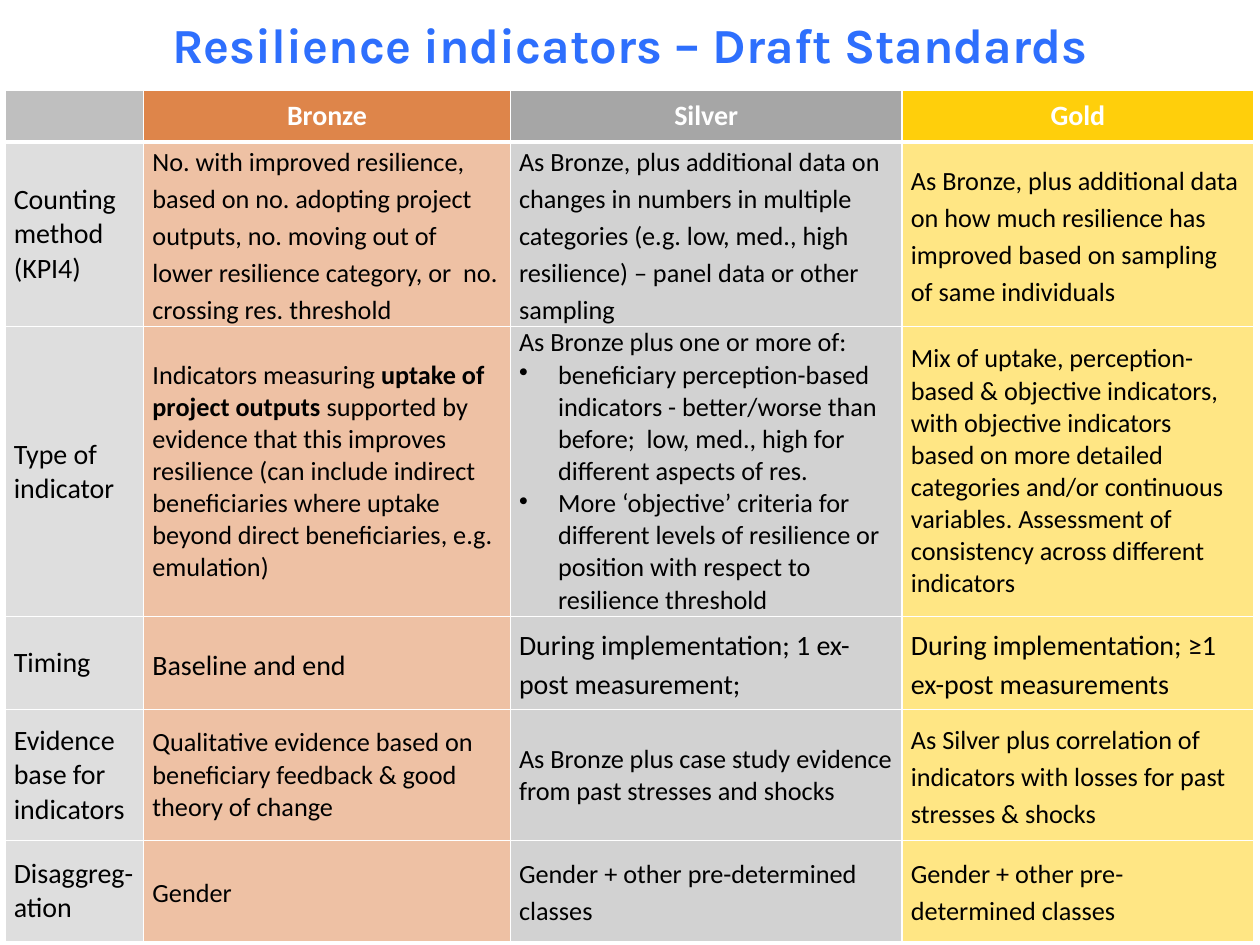
import pptx
import pptx.dml.color
import pptx.enum.text
import pptx.oxml
import pptx.oxml.ns
import pptx.util
from lxml import etree

Inches, Pt = pptx.util.Inches, pptx.util.Pt
RGBColor = pptx.dml.color.RGBColor
ALIGN = pptx.enum.text.PP_ALIGN
MIDDLE = pptx.enum.text.MSO_ANCHOR.MIDDLE

BLUE = RGBColor(0x2E, 0x6F, 0xFD)
WHITE = RGBColor(0xFF, 0xFF, 0xFF)
BLACK = RGBColor(0x00, 0x00, 0x00)
PALE_GREY = RGBColor(0xBF, 0xBF, 0xBF)
BRONZE = RGBColor(0xDE, 0x85, 0x4A)
SILVER = RGBColor(0xA6, 0xA6, 0xA6)
GOLD = RGBColor(0xFF, 0xCF, 0x0B)

# Table content: ** marks bold, a leading • marks a bullet
STANDARDS = ["", "Bronze", "Silver", "Gold"]
CRITERIA = [
    ["Counting method (KPI4)",
     "No. with improved resilience, based on no. adopting project outputs, no. moving out of "
     "lower resilience category, or  no. crossing res. threshold",
     "As Bronze, plus additional data on changes in numbers in multiple categories "
     "(e.g. low, med., high resilience) – panel data or other sampling",
     "As Bronze, plus additional data on how much resilience has improved based on sampling "
     "of same individuals"],
    ["Type of indicator",
     "Indicators measuring **uptake of project outputs **supported by evidence that this "
     "improves resilience (can include indirect beneficiaries where uptake beyond direct "
     "beneficiaries, e.g. emulation)",
     "As Bronze plus one or more of:\n"
     "•beneficiary perception-based indicators - better/worse than before;  low, med., high "
     "for different aspects of res.\n"
     "•More ‘objective’ criteria for different levels of resilience or position with respect "
     "to resilience threshold",
     "Mix of uptake, perception-based & objective indicators, with objective indicators  "
     "based on more detailed categories and/or continuous variables. Assessment of "
     "consistency across different indicators"],
    ["Timing",
     "Baseline and end",
     "During implementation; 1 ex-post measurement;",
     "During implementation; ≥1 ex-post measurements"],
    ["Evidence base for indicators",
     "Qualitative evidence based on beneficiary feedback & good theory of change",
     "As Bronze plus case study evidence from past stresses and shocks",
     "As Silver plus correlation of indicators with losses for past stresses & shocks"],
    ["Disaggreg-ation",
     "Gender",
     "Gender + other pre-determined classes",
     "Gender + other pre-determined classes"],
]
COLUMN_WIDTHS = [1.1, 2.91, 3.11, 2.79]
ROW_HEIGHTS = [0.37, 1.46, 2.3, 0.74, 1.04, 0.8]
COLUMN_COLOURS = [PALE_GREY, BRONZE, SILVER, GOLD]
TIMING_ROW = 3
SINGLE_SPACED = {(2, 1), (2, 2), (2, 3), (4, 1), (4, 2)}


def apply(target, formats):
    for name, value in formats.items():
        setattr(target, name, value)


class StandardsSlide:
    title_font = {"name": "Karla", "size": Pt(28), "bold": True}
    header_font = {"name": "Calibri", "size": Pt(16), "bold": True}
    body_insets = {"margin_left": Inches(0.07), "margin_right": Inches(0.07),
                   "margin_top": 0, "margin_bottom": 0}

    def __init__(self, deck):
        self.slide = deck.slides.add_slide(deck.slide_layouts[6])

    def add_runs(self, paragraph, text, font, colour):
        for index, part in enumerate(text.split("**")):
            if part:
                run = paragraph.add_run()
                run.text = part
                apply(run.font, font)
                run.font.color.rgb = colour
                if index % 2:
                    run.font.bold = True

    def title(self, text, left, top, width, height):
        box = self.slide.shapes.add_textbox(
            Inches(left), Inches(top), Inches(width), Inches(height))
        margins = {f"margin_{side}": Inches(0.04) for side in ("left", "top", "right", "bottom")}
        apply(box.text_frame, {"word_wrap": True, "vertical_anchor": MIDDLE, **margins})
        paragraph = box.text_frame.paragraphs[0]
        paragraph.alignment = ALIGN.CENTER
        self.add_runs(paragraph, text, self.title_font, BLUE)

    def bullet(self, paragraph):
        properties = paragraph._p.get_or_add_pPr()
        properties.set("marL", str(Inches(0.31)))
        properties.set("indent", str(-Inches(0.31)))
        mark = etree.SubElement(properties, pptx.oxml.ns.qn("a:buChar"))
        mark.set("char", "•")

    def borders(self, cell, top=1, bottom=1):
        # Borders must come before the fill in the cell properties
        properties = cell._tc.get_or_add_tcPr()
        for side, points in (("L", 1), ("R", 1), ("T", top), ("B", bottom)):
            properties.append(pptx.oxml.parse_xml(
                f'<a:ln{side} {pptx.oxml.ns.nsdecls("a")} w="{Pt(points)}">'
                f'<a:solidFill><a:srgbClr val="{WHITE}"/></a:solidFill></a:ln{side}>'))

    def fill(self, cell, colour, opacity=100):
        cell.fill.solid()
        cell.fill.fore_color.rgb = colour
        if opacity < 100:
            tint = cell._tc.tcPr.find(
                f'{pptx.oxml.ns.qn("a:solidFill")}/{pptx.oxml.ns.qn("a:srgbClr")}')
            etree.SubElement(tint, pptx.oxml.ns.qn("a:alpha")).set("val", str(opacity * 1000))

    def header_cell(self, cell, text, colour):
        cell.vertical_anchor = MIDDLE
        self.borders(cell, bottom=3)
        self.fill(cell, colour)
        paragraph = cell.text_frame.paragraphs[0]
        paragraph.alignment = ALIGN.CENTER
        self.add_runs(paragraph, text, self.header_font, WHITE)

    def body_cell(self, cell, text, colour, size, spacing, top):
        apply(cell, {"vertical_anchor": MIDDLE, **self.body_insets})
        self.borders(cell, top=top)
        self.fill(cell, colour, opacity=50)
        font = {"name": "Calibri", "size": Pt(size), "bold": False}
        for index, line in enumerate(text.split("\n")):
            frame = cell.text_frame
            paragraph = frame.add_paragraph() if index else frame.paragraphs[0]
            apply(paragraph, {"alignment": ALIGN.LEFT, "line_spacing": spacing})
            if line.startswith("•"):
                self.bullet(paragraph)
            self.add_runs(paragraph, line.lstrip("•"), font, BLACK)

    def standards_table(self, left, top):
        table = self.slide.shapes.add_table(
            len(ROW_HEIGHTS), len(COLUMN_WIDTHS), Inches(left), Inches(top),
            Inches(sum(COLUMN_WIDTHS)), Inches(sum(ROW_HEIGHTS))).table
        apply(table, {"first_row": False, "horz_banding": False})
        for column, width in zip(table.columns, COLUMN_WIDTHS):
            column.width = Inches(width)
        for row, height in zip(table.rows, ROW_HEIGHTS):
            row.height = Inches(height)
        for c, (standard, colour) in enumerate(zip(STANDARDS, COLUMN_COLOURS)):
            self.header_cell(table.cell(0, c), standard, colour)
            for r, criterion in enumerate(CRITERIA, start=1):
                size = 16 if c == 0 or r == TIMING_ROW else 15
                spacing = 1.0 if c == 0 or (r, c) in SINGLE_SPACED else 1.15
                self.body_cell(table.cell(r, c), criterion[c], colour, size, spacing,
                               top=3 if r == 1 else 1)


def main():
    deck = pptx.Presentation()
    apply(deck, {"slide_width": Inches(10), "slide_height": Inches(7.5)})
    page = StandardsSlide(deck)
    # Table of standards
    page.standards_table(0.04, 0.72)
    # Title
    page.title("Resilience indicators – Draft Standards", 0.12, 0.01, 9.76, 0.67)
    deck.save("out.pptx")


if __name__ == "__main__":
    main()
